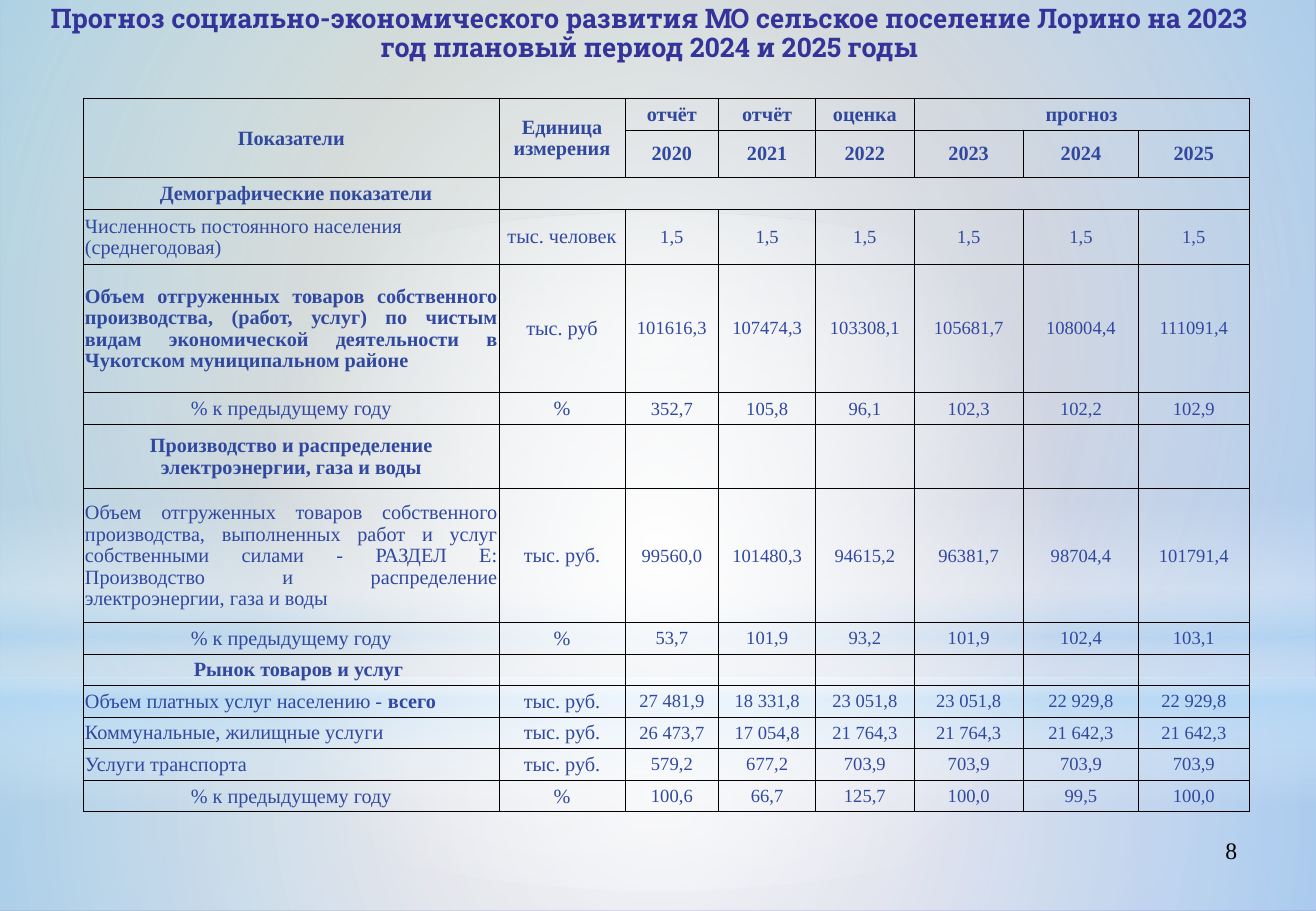
import pptx
import pptx.util
import pptx.dml.color
import pptx.enum.shapes
import pptx.enum.text
import pptx.oxml
import pptx.oxml.ns
import lxml.etree

Inches = pptx.util.Inches
Pt = pptx.util.Pt
RGBColor = pptx.dml.color.RGBColor
qn = pptx.oxml.ns.qn
ALIGN = pptx.enum.text.PP_ALIGN
MIDDLE = pptx.enum.text.MSO_ANCHOR.MIDDLE
SHAPES = pptx.enum.shapes.MSO_SHAPE

WHITE = RGBColor(0xFF, 0xFF, 0xFF)
SKY = RGBColor(0xB4, 0xDC, 0xFA)
SAGE = RGBColor(0x96, 0xAB, 0x94)
VIOLET = RGBColor(0x84, 0x88, 0xC4)
INDIGO = RGBColor(0x33, 0x33, 0x99)
TABLE_BLUE = RGBColor(0x31, 0x48, 0x9F)
BLACK = RGBColor(0, 0, 0)
SERIF = "Times New Roman"


def set_gradient(fill, owner, stops, angle=None):
    fill.gradient()
    gradient = owner.find(".//" + qn("a:gradFill"))
    for child in list(gradient):
        gradient.remove(child)
    stop_list = lxml.etree.SubElement(gradient, qn("a:gsLst"))
    for position, color, opacity in stops:
        stop = lxml.etree.SubElement(stop_list, qn("a:gs"), pos=str(position * 1000))
        tint = lxml.etree.SubElement(stop, qn("a:srgbClr"), val=str(color))
        lxml.etree.SubElement(tint, qn("a:alpha"), val=str(opacity * 1000))
    if angle is None:
        path = lxml.etree.SubElement(gradient, qn("a:path"), path="circle")
        lxml.etree.SubElement(path, qn("a:fillToRect"), l="50000", t="50000", r="50000", b="50000")
    else:
        lxml.etree.SubElement(gradient, qn("a:lin"), ang=str(angle * 60000), scaled="0")


def format_runs(paragraph, font_name, size, color, bold=False):
    for run in paragraph.runs:
        run.font.name = font_name
        run.font.size = Pt(size)
        run.font.color.rgb = color
        run.font.bold = bold


presentation = pptx.Presentation()
presentation.slide_width = Inches(10.84)
presentation.slide_height = Inches(7.5)
slide = presentation.slides.add_slide(presentation.slide_layouts[6])
set_gradient(slide.background.fill, slide._element, [(0, SAGE, 100), (100, VIOLET, 100)], 45)

glows = [
    (SHAPES.RECTANGLE, 5.58, 1.92, [(0, WHITE, 91), (37, WHITE, 76), (100, SKY, 79)], None),
    (SHAPES.RECTANGLE, 0, 5.58, [(0, WHITE, 89), (48, WHITE, 62), (100, SKY, 79)], None),
    (SHAPES.RECTANGLE, 4.12, 2.5, [(0, WHITE, 0), (29, WHITE, 30), (45, SKY, 40),
                                   (55, WHITE, 26), (65, SKY, 60), (100, WHITE, 0)], 90),
    (SHAPES.OVAL, 1.75, 5.58, [(0, WHITE, 100), (56, WHITE, 0)], None),
]
for kind, top, height, stops, angle in glows:
    glow = slide.shapes.add_shape(kind, 0, Inches(top), presentation.slide_width, Inches(height))
    glow.shadow.inherit = False
    glow.line.fill.background()
    set_gradient(glow.fill, glow._element, stops, angle)

page_number = slide.shapes.add_textbox(Inches(7.76), Inches(6.83), Inches(2.53), Inches(0.52))
page_number.text_frame.word_wrap = True
page_number.text_frame.text = "8"
paragraph = page_number.text_frame.paragraphs[0]
paragraph.alignment = ALIGN.RIGHT
format_runs(paragraph, SERIF, 14, BLACK)

title = slide.shapes.add_textbox(Inches(0.31), Inches(0.04), Inches(10.08), Inches(0.77))
title.text_frame.word_wrap = True
title.text_frame.vertical_anchor = MIDDLE
title.text_frame.margin_top = 0
title.text_frame.margin_bottom = Inches(0.29)
title.text_frame.text = (
    "Прогноз социально-экономического развития МО сельское поселение Лорино на "
    "2023 год плановый период 2024 и 2025 годы")
paragraph = title.text_frame.paragraphs[0]
paragraph.alignment = ALIGN.CENTER
paragraph.line_spacing = 0.9
format_runs(paragraph, "Roboto Slab", 16, INDIGO, True)

PERCENT = "% к предыдущему году"
TOTAL = "всего"
rows = [
    (0.26, ["Показатели", "Единица измерения", "отчёт", "отчёт", "оценка", "прогноз"]),
    (0.38, ["", "", "2020", "2021", "2022", "2023", "2024", "2025"]),
    (0.26, ["Демографические показатели"]),
    (0.45, ["Численность постоянного населения (среднегодовая)", "тыс. человек"] + ["1,5"] * 6),
    (1.06, ["Объем отгруженных товаров собственного производства, (работ, услуг) по чистым "
            "видам экономической деятельности в Чукотском муниципальном районе", "тыс. руб",
            "101616,3", "107474,3", "103308,1", "105681,7", "108004,4", "111091,4"]),
    (0.26, [PERCENT, "%", "352,7", "105,8", "96,1", "102,3", "102,2", "102,9"]),
    (0.53, ["Производство и распределение электроэнергии, газа и воды"]),
    (1.1, ["Объем отгруженных товаров собственного производства, выполненных работ и услуг "
           "собственными силами - РАЗДЕЛ E: Производство и распределение электроэнергии, "
           "газа и воды", "тыс. руб.",
           "99560,0", "101480,3", "94615,2", "96381,7", "98704,4", "101791,4"]),
    (0.26, [PERCENT, "%", "53,7", "101,9", "93,2", "101,9", "102,4", "103,1"]),
    (0.26, ["Рынок товаров и услуг"]),
    (0.26, ["Объем платных услуг населению - ", "тыс. руб.",
            "27 481,9", "18 331,8", "23 051,8", "23 051,8", "22 929,8", "22 929,8"]),
    (0.26, ["Коммунальные, жилищные услуги", "тыс. руб.",
            "26 473,7", "17 054,8", "21 764,3", "21 764,3", "21 642,3", "21 642,3"]),
    (0.26, ["Услуги транспорта", "тыс. руб.",
            "579,2", "677,2", "703,9", "703,9", "703,9", "703,9"]),
    (0.26, [PERCENT, "%", "100,6", "66,7", "125,7", "100,0", "99,5", "100,0"]),
]
column_widths = [3.42, 1.04, 0.77, 0.8, 0.81, 0.9, 0.95, 0.91]
label_alignments = {3: ALIGN.LEFT, 4: ALIGN.JUSTIFY, 7: ALIGN.JUSTIFY,
                    10: ALIGN.LEFT, 11: ALIGN.LEFT, 12: ALIGN.LEFT}
bold_labels = {2, 4, 6, 9}
label_indents = {2: 0.09, 9: 0.13}
total_row = 10

table_frame = slide.shapes.add_table(
    len(rows), len(column_widths), Inches(0.69), Inches(0.81),
    Inches(sum(column_widths)), Inches(sum(height for height, texts in rows)))
table = table_frame.table
table.first_row = False
table.horz_banding = False
for column, width in zip(table.columns, column_widths):
    column.width = Inches(width)
for first, last in [((0, 0), (1, 0)), ((0, 1), (1, 1)), ((0, 5), (0, 7)), ((2, 1), (2, 7))]:
    table.cell(*first).merge(table.cell(*last))

for row_index, (height, texts) in enumerate(rows):
    table.rows[row_index].height = Inches(height)
    for column_index in range(len(column_widths)):
        cell = table.cell(row_index, column_index)
        is_label = column_index == 0
        cell.vertical_anchor = MIDDLE
        cell.margin_left = Inches(label_indents.get(row_index, 0.01) if is_label else 0.01)
        cell.margin_right = cell.margin_top = Inches(0.01)
        cell.margin_bottom = 0
        properties = cell._tc.get_or_add_tcPr()
        for side in ("a:lnL", "a:lnR", "a:lnT", "a:lnB"):
            border = lxml.etree.SubElement(properties, qn(side), w=str(Pt(0.5)))
            border_fill = lxml.etree.SubElement(border, qn("a:solidFill"))
            lxml.etree.SubElement(border_fill, qn("a:srgbClr"), val=str(BLACK))
        cell.fill.background()

        paragraph = cell.text_frame.paragraphs[0]
        paragraph.line_spacing = 0.96
        paragraph.alignment = label_alignments.get(row_index, ALIGN.CENTER) if is_label else ALIGN.CENTER
        text = texts[column_index] if column_index < len(texts) else ""
        if not text:
            lxml.etree.SubElement(paragraph._p, qn("a:endParaRPr"), sz="1100")
            continue
        paragraph.text = text
        is_total = is_label and row_index == total_row
        if is_total:
            paragraph.add_run().text = TOTAL
        size = 11 if row_index > 1 and column_index > 1 else 12
        bold = row_index < 2 or (is_label and row_index in bold_labels)
        format_runs(paragraph, SERIF, size, TABLE_BLUE, bold)
        if is_total:
            paragraph.runs[-1].font.bold = True

presentation.save("out.pptx")
